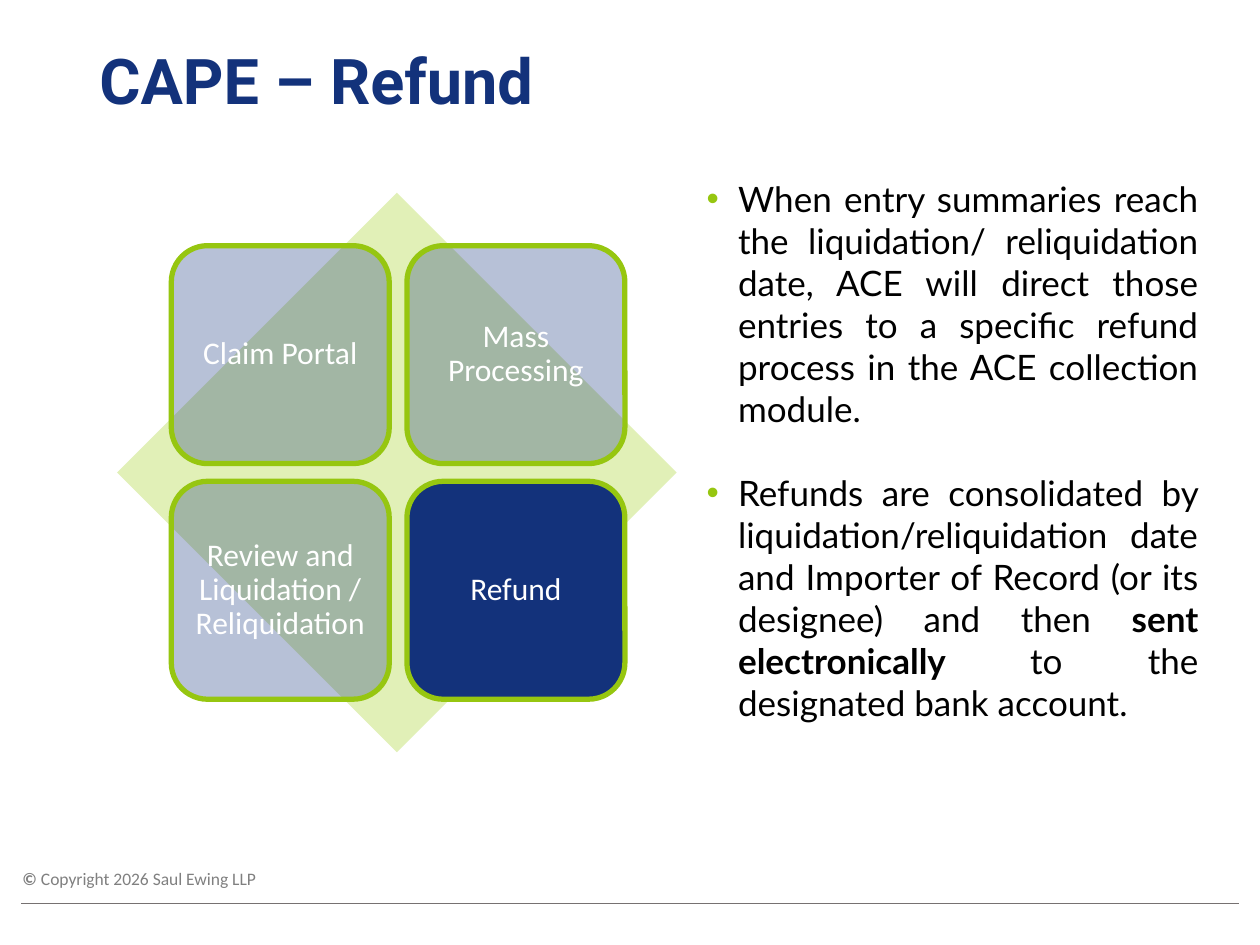
from dataclasses import dataclass

from lxml.etree import SubElement
from pptx import Presentation
from pptx.dml.color import RGBColor
from pptx.enum.shapes import MSO_CONNECTOR, MSO_SHAPE
from pptx.enum.text import MSO_ANCHOR, PP_ALIGN
from pptx.oxml.ns import qn
from pptx.util import Inches, Pt


@dataclass(frozen=True)
class Theme:
    """Colours, fonts and type sizes of the slide."""
    navy: str = "13327B"
    green: str = "96C610"
    pale_green: str = "E1F0B7"
    white: str = "FFFFFF"
    black: str = "000000"
    grey: str = "808080"
    rule: str = "767171"
    title_font: str = "Roboto"
    body_font: str = "Lato"
    label_font: str = "Calibri"
    title_size: int = 36
    body_size: int = 20
    label_size: int = 18
    footer_size: int = 10


THEME = Theme()
STEPS = ["Claim Portal", "Mass Processing",
         "Review and Liquidation / Reliquidation", "Refund"]
CURRENT_STEP = "Refund"
POINTS = [
    [("When entry summaries reach the liquidation/ reliquidation date, ACE will "
      "direct those entries to a specific refund process in the ACE collection "
      "module.", False)],
    [("Refunds are consolidated by liquidation/reliquidation date and Importer "
      "of Record (or its designee) and then ", False),
     ("sent electronically ", True),
     ("to the designated bank account.", False)],
]


def rgb(color):
    """Turn a hex string into a colour."""
    return RGBColor.from_string(color)


def add_run(p, text, *, font, size, color, bold=False):
    """Add a formatted run to a paragraph."""
    r = p.add_run()
    r.text = text
    r.font.name = font
    r.font.size = Pt(size)
    r.font.bold = bold
    r.font.color.rgb = rgb(color)


def add_bullet(p, color):
    """Give a paragraph a coloured bullet with a hanging indent."""
    pPr = p._p.get_or_add_pPr()
    pPr.set("marL", str(Inches(0.25)))
    pPr.set("indent", str(-Inches(0.25)))
    clr = SubElement(pPr, qn("a:buClr"))
    SubElement(clr, qn("a:srgbClr"), val=color)
    SubElement(pPr, qn("a:buFont"), typeface="Arial")
    SubElement(pPr, qn("a:buChar"), char="•")


def add_text_box(s, left, top, width, height, wrap=True):
    """Add an empty text box and return its text frame."""
    box = s.shapes.add_textbox(Inches(left), Inches(top), Inches(width), Inches(height))
    tf = box.text_frame
    tf.word_wrap = wrap
    return tf


def add_shape(s, kind, left, top, size, fill, alpha=100):
    """Add a square-bounded preset shape with no outline."""
    sp = s.shapes.add_shape(kind, Inches(left), Inches(top), Inches(size), Inches(size))
    sp.shadow.inherit = False
    sp.fill.solid()
    sp.fill.fore_color.rgb = rgb(fill)
    sp.line.fill.background()
    if alpha < 100:
        clr = sp._element.spPr.find(qn("a:solidFill")).find(qn("a:srgbClr"))
        SubElement(clr, qn("a:alpha"), val=str(alpha * 1000))
    return sp


def add_title(s, text):
    """Add the slide title."""
    tf = add_text_box(s, 0.69, 0.25, 8.62, 0.84)
    tf.vertical_anchor = MSO_ANCHOR.MIDDLE
    p = tf.paragraphs[0]
    p.line_spacing = 0.9
    add_run(p, text, font=THEME.title_font, size=THEME.title_size,
            color=THEME.navy, bold=True)


def add_points(s, points):
    """Add the justified bullet list."""
    tf = add_text_box(s, 5.51, 1.36, 4.1, 4.78)
    for i, runs in enumerate(points):
        p = tf.add_paragraph() if i else tf.paragraphs[0]
        p.alignment = PP_ALIGN.JUSTIFY
        p.space_before = Pt(24 if i else 0)
        add_bullet(p, THEME.green)
        for text, bold in runs:
            add_run(p, text, font=THEME.body_font, size=THEME.body_size,
                    color=THEME.black, bold=bold)


def add_step(s, text, left, top, size):
    """Add one rounded step tile, faded unless it is the current one."""
    alpha = 100 if text == CURRENT_STEP else 30
    sp = add_shape(s, MSO_SHAPE.ROUNDED_RECTANGLE, left, top, size, THEME.navy, alpha)
    sp.line.color.rgb = rgb(THEME.green)
    sp.line.width = Pt(3)
    tf = sp.text_frame
    tf.word_wrap = True
    tf.vertical_anchor = MSO_ANCHOR.MIDDLE
    tf.margin_left = tf.margin_right = tf.margin_top = tf.margin_bottom = Inches(0.08)
    p = tf.paragraphs[0]
    p.alignment = PP_ALIGN.CENTER
    p.line_spacing = 0.9
    add_run(p, text, font=THEME.label_font, size=THEME.label_size, color=THEME.white)


def add_matrix(s, steps):
    """Add the diamond with its two-by-two grid of steps."""
    add_shape(s, MSO_SHAPE.DIAMOND, 0.93, 1.53, 4.44, THEME.pale_green)
    tile, pitch = 1.73, 1.87
    for i, text in enumerate(steps):
        row, col = divmod(i, 2)
        add_step(s, text, 1.36 + col * pitch, 1.95 + row * pitch, tile)


def add_footer(s):
    """Add the copyright line and the rule below it."""
    p = add_text_box(s, 0.08, 6.84, 2.08, 0.27, wrap=False).paragraphs[0]
    for text, bold in [("© ", True), ("Copyright 2026 Saul Ewing LLP", False)]:
        add_run(p, text, font=THEME.label_font, size=THEME.footer_size,
                color=THEME.grey, bold=bold)
    rule = s.shapes.add_connector(MSO_CONNECTOR.STRAIGHT, Inches(0.17), Inches(7.17),
                                  Inches(9.83), Inches(7.17))
    rule.line.color.rgb = rgb(THEME.rule)
    rule.line.width = Pt(0.5)
    SubElement(rule._element.spPr, qn("a:effectLst"))


def main():
    """Build and save the slide."""
    prs = Presentation()
    prs.slide_width, prs.slide_height = Inches(10), Inches(7.5)
    s = prs.slides.add_slide(prs.slide_layouts[6])
    add_footer(s)
    add_points(s, POINTS)
    add_title(s, "CAPE – Refund")
    add_matrix(s, STEPS)
    prs.save("out.pptx")


if __name__ == "__main__":
    main()
